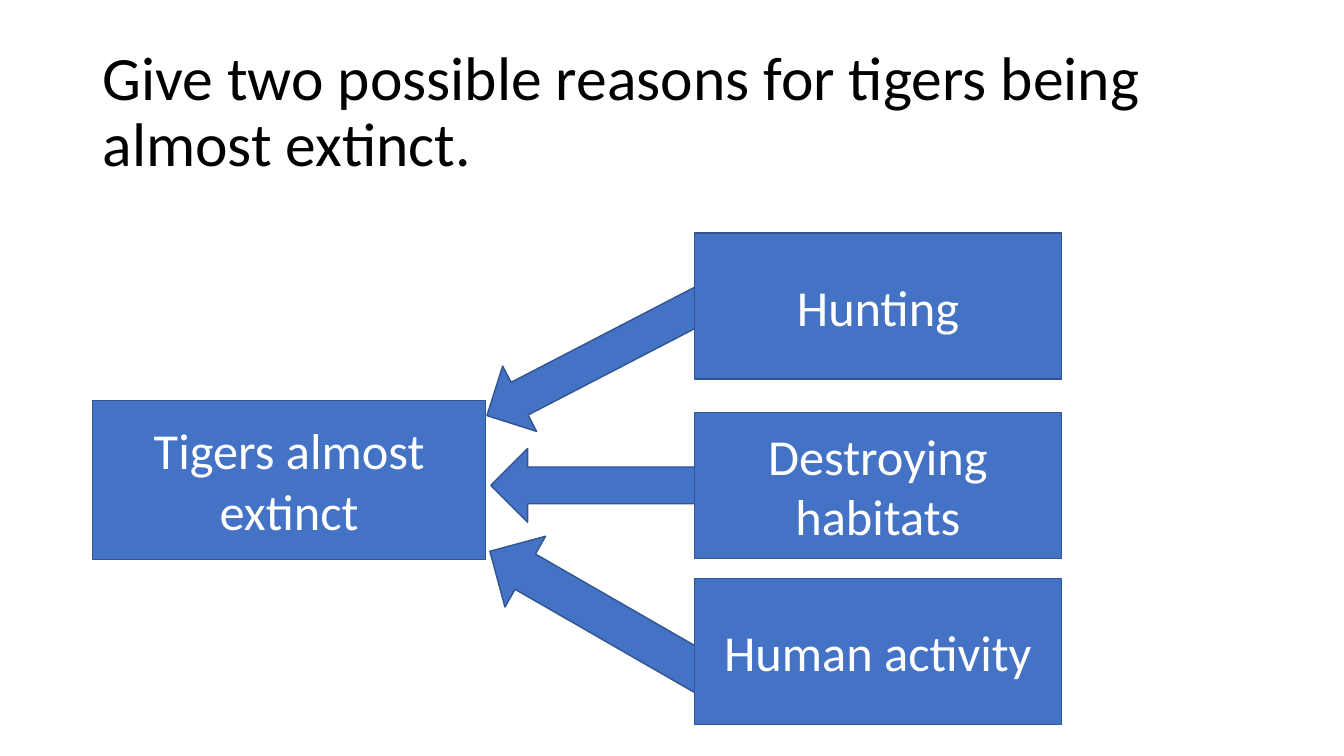
from pptx import Presentation
from pptx.dml.color import RGBColor
from pptx.enum.shapes import MSO_SHAPE
from pptx.enum.text import MSO_ANCHOR, PP_ALIGN
from pptx.util import Pt

FILL, OUTLINE, WHITE, BLACK = "4472C4", "325491", "FFFFFF", "000000"

QUESTION = "Give two possible reasons for tigers being almost extinct."
EFFECT = "Tigers almost extinct"
# Each cause: wording, top of its box, arrow box (left, top, width, height), arrow angle
CAUSES = [
    ("Hunting", 166.3, (337.7, 229, 180.7, 52.6), 152.6),
    ("Destroying habitats", 294.5, (350.6, 320.4, 166.3, 52.6), 180),
    ("Human activity", 413.3, (337.7, 410.4, 183.6, 58.3), 209.9),
]


def color(code):
    return RGBColor.from_string(code)


def write(frame, wording, size, ink, align, spacing):
    frame.word_wrap = True
    frame.vertical_anchor = MSO_ANCHOR.MIDDLE
    paragraph = frame.paragraphs[0]
    paragraph.alignment = align
    paragraph.line_spacing = spacing
    run = paragraph.add_run()
    run.text = wording
    run.font.color.rgb = color(ink)
    for name, value in {"name": "Calibri", "size": Pt(size)}.items():
        setattr(run.font, name, value)


def add_title(slide, box, wording):
    title = slide.shapes.add_textbox(*map(Pt, box))
    write(title.text_frame, wording, 44, BLACK, PP_ALIGN.LEFT, 0.9)


def add_block(slide, preset, box):
    """Add a preset shape in the diagram's fill and outline."""
    block = slide.shapes.add_shape(preset, *map(Pt, box))
    block.shadow.inherit = False
    block.fill.solid()
    block.fill.fore_color.rgb = color(FILL)
    block.line.color.rgb = color(OUTLINE)
    block.line.width = Pt(1)
    return block


def add_label(slide, box, wording):
    label = add_block(slide, MSO_SHAPE.RECTANGLE, box)
    write(label.text_frame, wording, 36, WHITE, PP_ALIGN.CENTER, 1.0)


def add_diagram(slide, box):
    """Place the effect on the left and the causes, with arrows, on the right."""
    left, top, width, height = box
    cause_width, cause_height = 262.1, 104.4
    for _, _, arrow_box, angle in CAUSES:
        arrow = add_block(slide, MSO_SHAPE.RIGHT_ARROW, arrow_box)
        arrow.rotation = angle
    for wording, cause_top, _, _ in CAUSES:
        cause_left = left + width - cause_width
        add_label(slide, (cause_left, cause_top, cause_width, cause_height), wording)
    effect_height = 113.8
    effect_top = top + (height - effect_height) / 2
    add_label(slide, (left, effect_top + 0.9, 280.8, effect_height), EFFECT)


def main():
    deck = Presentation()
    deck.slide_width, deck.slide_height = Pt(960), Pt(540)
    slide = deck.slides.add_slide(deck.slide_layouts[6])
    add_title(slide, (66.2, 28.8, 828, 104.4), QUESTION)
    add_diagram(slide, (66.2, 166.3, 692, 351.4))
    deck.save("out.pptx")


if __name__ == "__main__":
    main()
